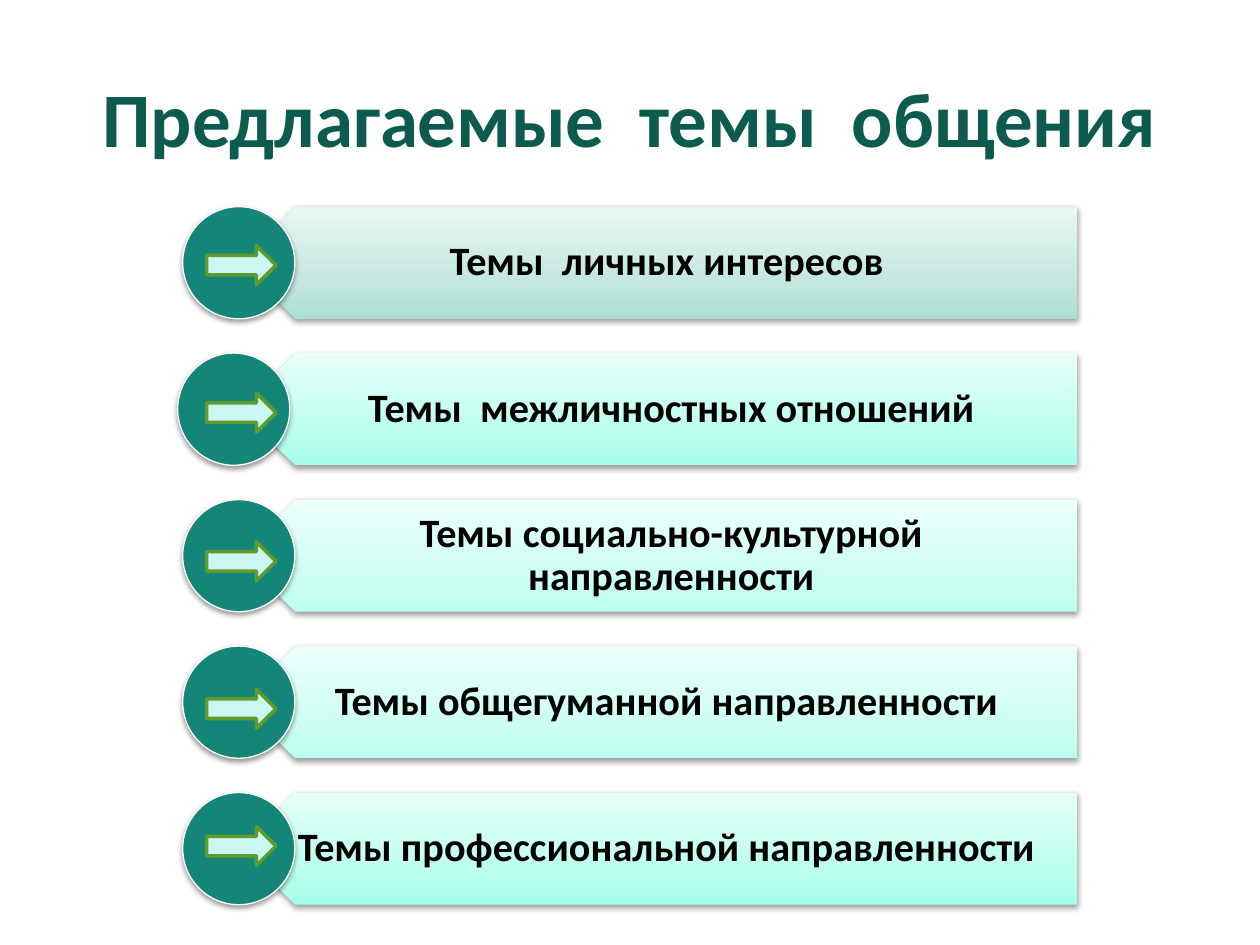
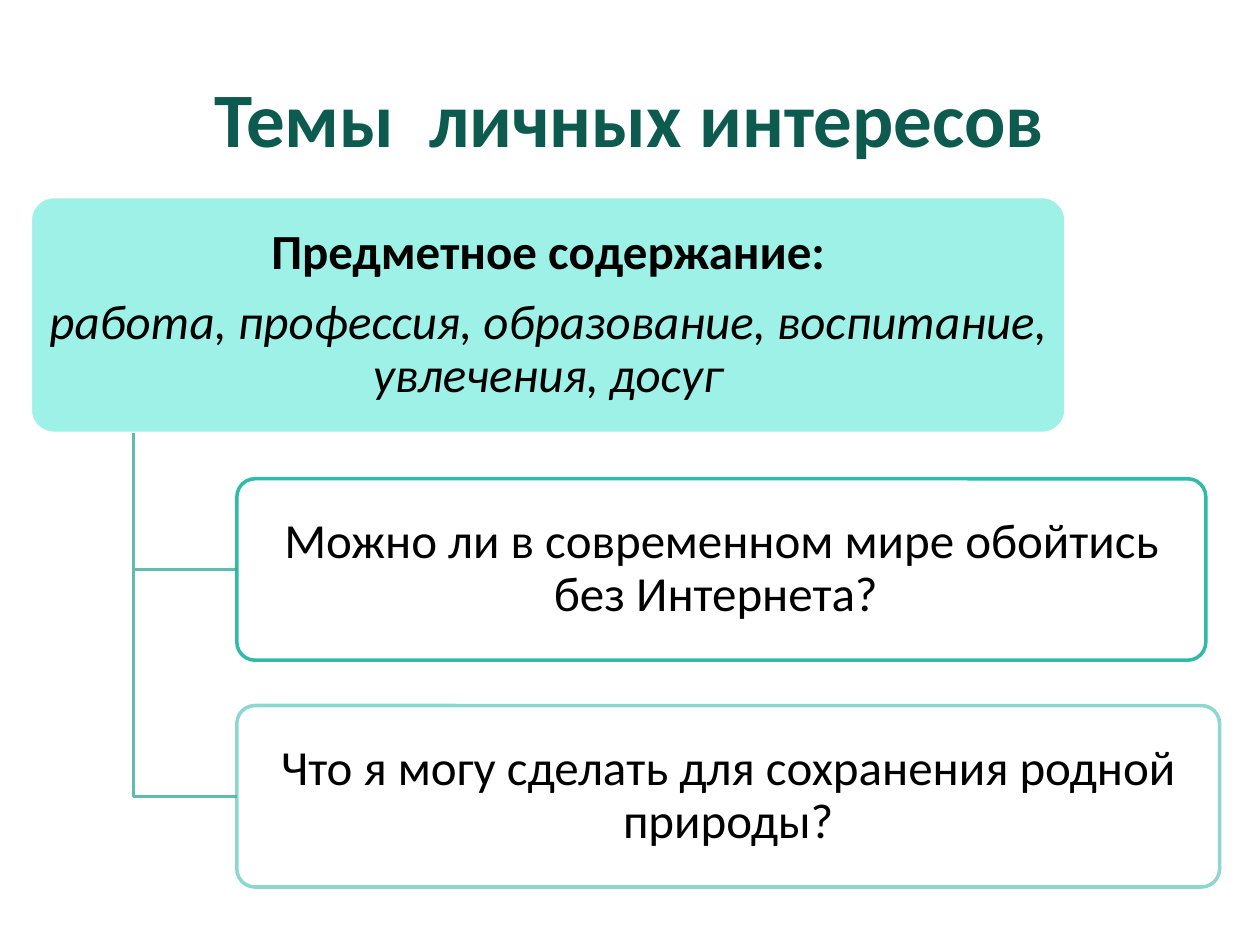
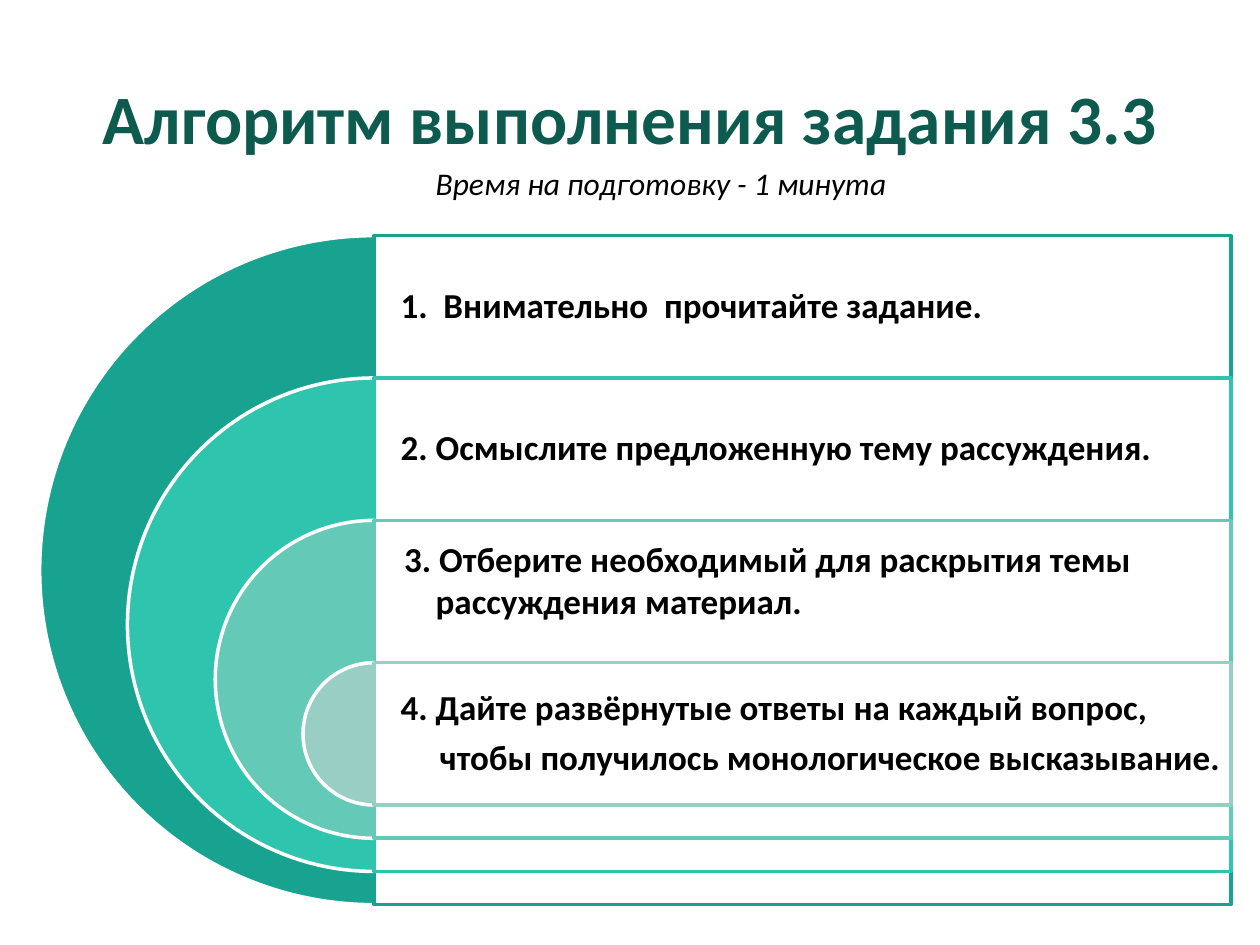
from lxml import etree
from pptx import Presentation
from pptx.dml.color import RGBColor
from pptx.enum.shapes import MSO_SHAPE as Preset
from pptx.enum.text import MSO_ANCHOR as Anchor, MSO_AUTO_SIZE as AutoSize, PP_ALIGN as Align
from pptx.oxml.ns import qn
from pptx.util import Inches, Pt

FONT = "Calibri"
BLACK = RGBColor(0x00, 0x00, 0x00)
WHITE = RGBColor(0xFF, 0xFF, 0xFF)
TITLE_GREEN = RGBColor(0x0D, 0x5A, 0x4F)
CIRCLE_GREEN = RGBColor(0x13, 0x86, 0x77)
ARROW_FILL = RGBColor(0xCA, 0xF7, 0xF1)
ARROW_LINE = RGBColor(0x5E, 0x9B, 0x2C)
SUBJECT_FILL = RGBColor(0x94, 0xF0, 0xE4)
BRANCH_LINE = RGBColor(0x60, 0xBC, 0xAC)
QUESTION_LINE = RGBColor(0x1A, 0xB3, 0x9F)
STEP_COLORS = [
    RGBColor(0x18, 0xA2, 0x90),
    RGBColor(0x2F, 0xC4, 0xAD),
    RGBColor(0x64, 0xC9, 0xB7),
    RGBColor(0x98, 0xCE, 0xC3),
]
GREY_GREEN = [
    RGBColor(0xAC, 0xDF, 0xD3), RGBColor(0xC5, 0xE7, 0xDF), RGBColor(0xE9, 0xF7, 0xF3)]
BRIGHT_MINT = [
    RGBColor(0xA5, 0xFF, 0xE9), RGBColor(0xBF, 0xFF, 0xEF), RGBColor(0xE7, 0xFF, 0xF9)]
PALE_MINT = [
    RGBColor(0xBB, 0xFF, 0xF0), RGBColor(0xCF, 0xFF, 0xF4), RGBColor(0xEC, 0xFF, 0xFB)]
GRADIENT_POSITIONS = [0, 35, 100]

TOPICS = [
    ("Темы  личных интересов ", GREY_GREEN, 1.45, 1.95),
    ("Темы  межличностных отношений", BRIGHT_MINT, 1.41, 3.12),
    ("Темы социально-культурной направленности", PALE_MINT, 1.45, 4.3),
    ("Темы общегуманной направленности ", PALE_MINT, 1.45, 5.47),
    ("Темы профессиональной направленности ", BRIGHT_MINT, 1.45, 6.56),
]
QUESTIONS = [
    ("Можно ли в современном мире обойтись без Интернета? ", 3.8, 7.69, 90),
    ("Что я могу сделать для сохранения родной природы?", 5.6, 7.8, 50),
]
STEPS = [
    [("1.  Внимательно  прочитайте задание.", {"indent": 0.13})],
    [("2. Осмыслите предложенную тему рассуждения.", {"indent": 0.13})],
    [],
    [
        ("4. Дайте развёрнутые ответы на каждый вопрос,", {"indent": 0.13}),
        ("чтобы получилось монологическое высказывание.", {"indent": 0.44}),
    ],
]


def write_paragraph(paragraph, text, size=20, color=BLACK, bold=False, italic=False,
                    align=Align.LEFT, line_spacing=None, space_after=None, indent=None):
    paragraph.alignment = align
    paragraph.line_spacing = line_spacing
    if space_after is not None:
        paragraph.space_after = Pt(space_after)
    if indent is not None:
        paragraph._p.get_or_add_pPr().set("indent", str(Inches(indent)))
    run = paragraph.add_run()
    run.text = text
    run.font.name = FONT
    run.font.size = Pt(size)
    run.font.bold = bold
    run.font.italic = italic
    run.font.color.rgb = color


def write(shape, paragraphs, anchor=Anchor.MIDDLE, insets=None, wrap=True,
          auto_size=AutoSize.NONE, **style):
    frame = shape.text_frame
    frame.word_wrap = wrap
    frame.auto_size = auto_size
    frame.vertical_anchor = anchor
    if insets:
        frame.margin_left, frame.margin_top, frame.margin_right, frame.margin_bottom = map(
            Inches, insets)
    for index, (text, overrides) in enumerate(paragraphs):
        paragraph = frame.add_paragraph() if index else frame.paragraphs[0]
        write_paragraph(paragraph, text, **{**style, **overrides})


def add_text(slide, box, paragraphs, **style):
    write(slide.shapes.add_textbox(*map(Inches, box)), paragraphs, **style)


def set_alpha(parent, percent):
    for color in parent.iter(qn("a:srgbClr")):
        etree.SubElement(color, qn("a:alpha")).set("val", str(percent * 1000))


def add_box(slide, preset, box, fill, line=None, width=2, adjustments=(),
            fill_alpha=100, line_alpha=100):
    shape = slide.shapes.add_shape(preset, *map(Inches, box))
    shape.shadow.inherit = False
    for index, value in enumerate(adjustments):
        shape.adjustments[index] = value
    shape.fill.solid()
    shape.fill.fore_color.rgb = fill
    properties = shape._element.spPr
    if fill_alpha < 100:
        set_alpha(properties.find(qn("a:solidFill")), fill_alpha)
    if line is None:
        shape.line.fill.background()
    else:
        shape.line.color.rgb = line
        shape.line.width = Pt(width)
        if line_alpha < 100:
            set_alpha(properties.find(qn("a:ln")), line_alpha)
    return shape


def add_shadow(shape):
    effects = shape._element.spPr.find(qn("a:effectLst"))
    shadow = etree.SubElement(effects, qn("a:outerShdw"), blurRad=str(Pt(3.1)),
                              dist=str(Pt(1.6)), dir="5400000", rotWithShape="0")
    etree.SubElement(shadow, qn("a:srgbClr"), val=str(BLACK))
    set_alpha(shadow, 38)


def set_gradient(shape, colors):
    shape.fill.gradient()
    shape.fill.gradient_angle = 90
    stops = shape._element.spPr.find(qn("a:gradFill")).find(qn("a:gsLst"))
    for stop in list(stops):
        stops.remove(stop)
    for position, color in zip(GRADIENT_POSITIONS, colors):
        stop = etree.SubElement(stops, qn("a:gs"), pos=str(position * 1000))
        etree.SubElement(stop, qn("a:srgbClr"), val=str(color))


def add_slide(presentation, title, size=44):
    slide = presentation.slides.add_slide(presentation.slide_layouts[5])
    placeholder = slide.shapes.title
    placeholder.left, placeholder.top = Inches(0.5), Inches(0.3)
    placeholder.width, placeholder.height = Inches(9), Inches(1.25)
    write(placeholder, [(title, {})], size=size, color=TITLE_GREEN, bold=True,
          align=Align.CENTER)
    return slide


def add_topic(slide, top, text, colors, circle_left):
    band_box = (1.9, top, 6.65, 0.89)
    band = add_box(slide, Preset.PENTAGON, band_box, WHITE)
    band._element.spPr.xfrm.set("flipH", "1")
    set_gradient(band, colors)
    add_shadow(band)
    add_text(slide, band_box, [(text, {})], insets=(0.39, 0.1, 0.18, 0.1), size=23,
             bold=True, align=Align.CENTER, line_spacing=0.9, space_after=8)
    circle = add_box(slide, Preset.OVAL, (circle_left, top, 0.89, 0.89), CIRCLE_GREEN,
                     WHITE, 0.75)
    add_shadow(circle)


def add_branch(slide, left, top, right, bottom):
    builder = slide.shapes.build_freeform(Inches(left), Inches(top))
    builder.add_line_segments(
        [(Inches(left), Inches(bottom)), (Inches(right), Inches(bottom))], close=False)
    branch = builder.convert_to_shape()
    branch.shadow.inherit = False
    branch.fill.background()
    branch.line.color.rgb = BRANCH_LINE
    branch.line.width = Pt(2)


def add_card(slide, box, paragraphs, fill, line, line_alpha=100):
    card = add_box(slide, Preset.ROUNDED_RECTANGLE, box, fill, line, adjustments=[0.1],
                   fill_alpha=90, line_alpha=line_alpha)
    write(card, paragraphs, insets=(0.01, 0.01, 0.01, 0.01), size=28,
          align=Align.CENTER, line_spacing=0.9, space_after=10)


def add_step(slide, top, diameter, color, paragraphs):
    center, width = 2.97, 6.8
    add_box(slide, Preset.PIE, (center - diameter / 2, top, diameter, diameter), color,
            WHITE, adjustments=[54, 162])
    add_box(slide, Preset.RECTANGLE, (center, top, width, diameter), WHITE, color,
            fill_alpha=90)
    if paragraphs:
        add_text(slide, (center, top, width, 1.13), paragraphs, insets=[0.08] * 4,
                 bold=True, line_spacing=0.9, space_after=7)


def build_topics(presentation):
    slide = add_slide(presentation, "Предлагаемые  темы  общения")
    first_top, last_top = 1.64, 6.29
    pitch = (last_top - first_top) / (len(TOPICS) - 1)
    for index, (text, colors, circle_left, _) in enumerate(TOPICS):
        add_topic(slide, first_top + index * pitch, text, colors, circle_left)
    for *_, arrow_top in TOPICS:
        add_box(slide, Preset.RIGHT_ARROW, (1.64, arrow_top, 0.55, 0.31), ARROW_FILL,
                ARROW_LINE)


def build_personal_interests(presentation):
    slide = add_slide(presentation, "Темы  личных интересов")
    subject = [
        ("Предметное содержание:", {"bold": True}),
        ("работа, профессия, образование, воспитание, увлечения, досуг", {"italic": True}),
    ]
    add_card(slide, (0.24, 1.56, 8.22, 1.88), subject, SUBJECT_FILL, WHITE)
    left, height = 1.88, 1.44
    for text, top, width, line_alpha in QUESTIONS:
        add_branch(slide, 1.06, 3.44, left, top + height / 2)
        add_card(slide, (left, top, width, height), [(text, {})], WHITE, QUESTION_LINE,
                 line_alpha)


def build_algorithm(presentation):
    slide = add_slide(presentation, "Алгоритм выполнения задания 3.3", size=39.6)
    largest, smallest = 5.31, 1.13
    shrink = (largest - smallest) / (len(STEPS) - 1)
    for index, (color, paragraphs) in enumerate(zip(STEP_COLORS, STEPS)):
        add_step(slide, 1.87 + index * 1.13, largest - index * shrink, color, paragraphs)
    third_step = [
        ("3. Отберите необходимый для раскрытия темы", {"indent": 0.06}),
        ("рассуждения материал.", {"indent": 0.31}),
    ]
    add_text(slide, (3.05, 4.22, 6.8, 0.77), third_step, anchor=Anchor.TOP,
             auto_size=AutoSize.SHAPE_TO_FIT_TEXT, bold=True)
    add_text(slide, (3.36, 1.25, 3.93, 0.4), [("Время на подготовку - 1 минута", {})],
             anchor=Anchor.TOP, wrap=False, auto_size=AutoSize.SHAPE_TO_FIT_TEXT,
             size=18, italic=True)


def main():
    presentation = Presentation()
    presentation.slide_width = Inches(10)
    presentation.slide_height = Inches(7.5)
    build_topics(presentation)
    build_personal_interests(presentation)
    build_algorithm(presentation)
    presentation.save("out.pptx")


if __name__ == "__main__":
    main()
